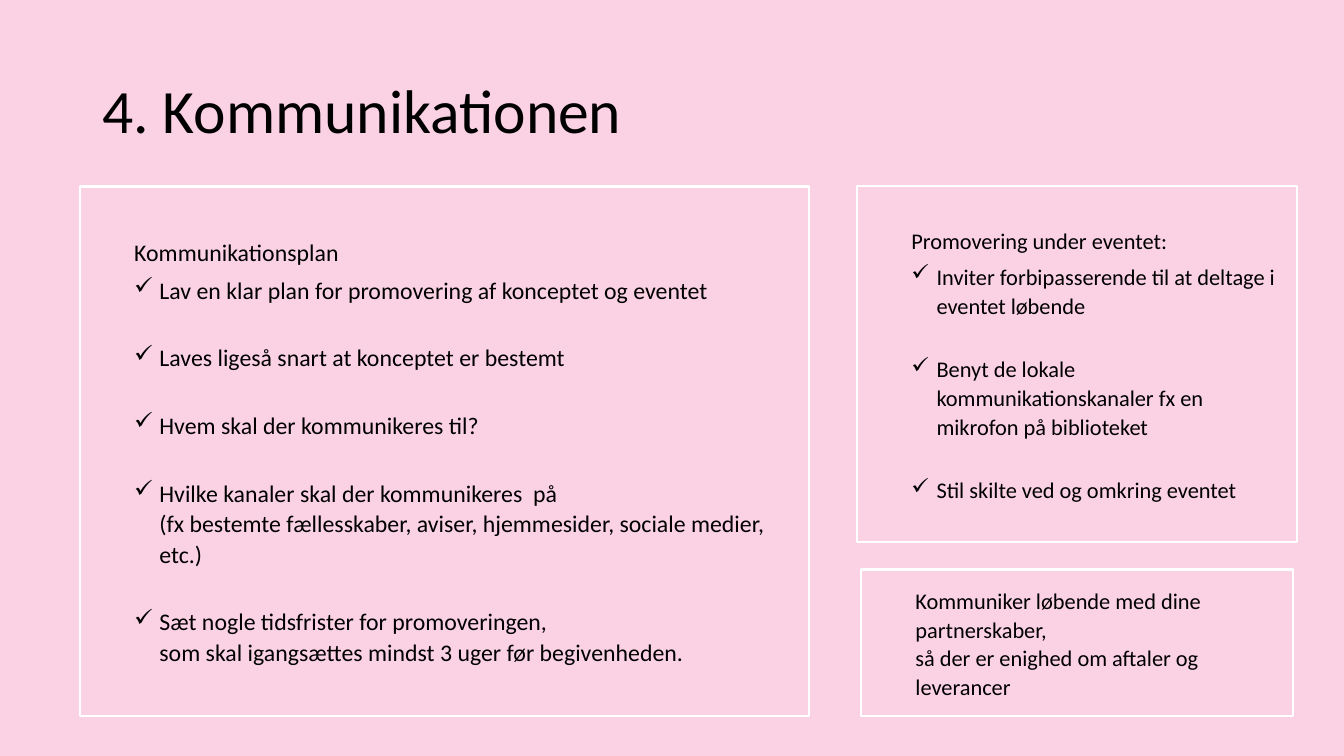
"""Build the slide on communication: a plan, promotion at the event and partner contact."""
from lxml import etree
from pptx import Presentation
from pptx import util as u
from pptx.dml.color import RGBColor
from pptx.enum import shapes, text
from pptx.oxml.ns import qn

COLORS = {"background": "FBD2E4", "outline": "FFFFFF", "text": "000000"}
FONT = "Calibri"
WIDTH, HEIGHT = 960, 540
PANEL_TOP = 133.2
LINE_SPACING = 1.07
SPACE_BEFORE = 5

PLAN = [
    "Lav en klar plan for promovering af konceptet og eventet",
    "Laves ligeså snart at konceptet er bestemt",
    "Hvem skal der kommunikeres til?",
    "Hvilke kanaler skal der kommunikeres  på\n"
    "(fx bestemte fællesskaber, aviser, hjemmesider, sociale medier, etc.)",
    "Sæt nogle tidsfrister for promoveringen,\n"
    "som skal igangsættes mindst 3 uger før begivenheden.",
]
PROMOTION = [
    "Inviter forbipasserende til at deltage i eventet løbende",
    "Benyt de lokale kommunikationskanaler fx en mikrofon på biblioteket",
    "Stil skilte ved og omkring eventet",
]
PARTNERS = ("Kommuniker løbende med dine partnerskaber,\n"
            "så der er enighed om aftaler og leverancer")


def color(key):
    """Return the named colour."""
    return RGBColor.from_string(COLORS[key])


def add_rectangle(slide, left, top, width, height):
    """Add a rectangle without shadow, fill or line."""
    rectangle = slide.shapes.add_shape(
        shapes.MSO_SHAPE.RECTANGLE, *map(u.Pt, (left, top, width, height)))
    rectangle.shadow.inherit = False
    rectangle.fill.background()
    rectangle.line.fill.background()
    return rectangle


def add_background(slide):
    """Cover the slide with the background colour."""
    backdrop = add_rectangle(slide, 0, 0, WIDTH, HEIGHT)
    backdrop.fill.solid()
    backdrop.fill.fore_color.rgb = color("background")


def write(paragraph, wording, size):
    """Write the wording as runs, with a line break at each newline."""
    paragraph.alignment = text.PP_ALIGN.LEFT
    for number, line in enumerate(wording.split("\n")):
        if number:
            paragraph.add_line_break()
        run = paragraph.add_run()
        run.text = line
        run.font.name = FONT
        run.font.size = u.Pt(size)
        run.font.color.rgb = color("text")


def add_title(slide, wording):
    """Add the slide title."""
    title = slide.shapes.add_textbox(*map(u.Pt, (66, 28.8, 828, 104.4)))
    frame = title.text_frame
    frame.word_wrap = True
    frame.vertical_anchor = text.MSO_ANCHOR.MIDDLE
    frame.paragraphs[0].line_spacing = 0.9
    write(frame.paragraphs[0], wording, 44)


def indent(paragraph, margin, hanging=0):
    """Set the left margin and the hanging indent."""
    properties = paragraph._p.get_or_add_pPr()
    properties.set("marL", str(u.Pt(margin)))
    properties.set("indent", str(-u.Pt(hanging)))
    return properties


def add_panel(slide, box, size, heading, items=(), gap=0, space_after=0):
    """Add an outlined panel with a heading and check-marked items."""
    panel = add_rectangle(slide, *box)
    panel.line.color.rgb = color("outline")
    panel.line.width = u.Pt(1.5)
    frame = panel.text_frame
    frame.word_wrap = True
    frame.vertical_anchor = text.MSO_ANCHOR.MIDDLE
    frame.margin_left, frame.margin_right = u.Pt(3), u.Pt(7.2)
    frame.margin_top = frame.margin_bottom = u.Pt(3.6)
    for number, wording in enumerate([heading, *items]):
        paragraph = frame.add_paragraph() if number else frame.paragraphs[0]
        paragraph.line_spacing = LINE_SPACING
        paragraph.space_before = u.Pt(gap if number > 1 else SPACE_BEFORE)
        paragraph.space_after = u.Pt(space_after)
        if number:
            properties = indent(paragraph, 54, 18)
            etree.SubElement(properties, qn("a:buChar")).set("char", "✓")
        else:
            indent(paragraph, 36)
        write(paragraph, wording, size)


def main():
    """Build and save the slide."""
    deck = Presentation()
    deck.slide_width, deck.slide_height = u.Pt(WIDTH), u.Pt(HEIGHT)
    slide = deck.slides.add_slide(deck.slide_layouts[6])
    add_background(slide)
    add_title(slide, "4. Kommunikationen")
    add_panel(slide, (56.9, PANEL_TOP, 521.3, 378), 17,
              "Kommunikationsplan", PLAN, gap=26.5)
    add_panel(slide, (614.9, 406.8, 308.9, 104.4), 16, PARTNERS, space_after=8)
    add_panel(slide, (612, PANEL_TOP, 314.6, 254.2), 16,
              "Promovering under eventet:", PROMOTION, gap=25)
    deck.save("out.pptx")


if __name__ == "__main__":
    main()
